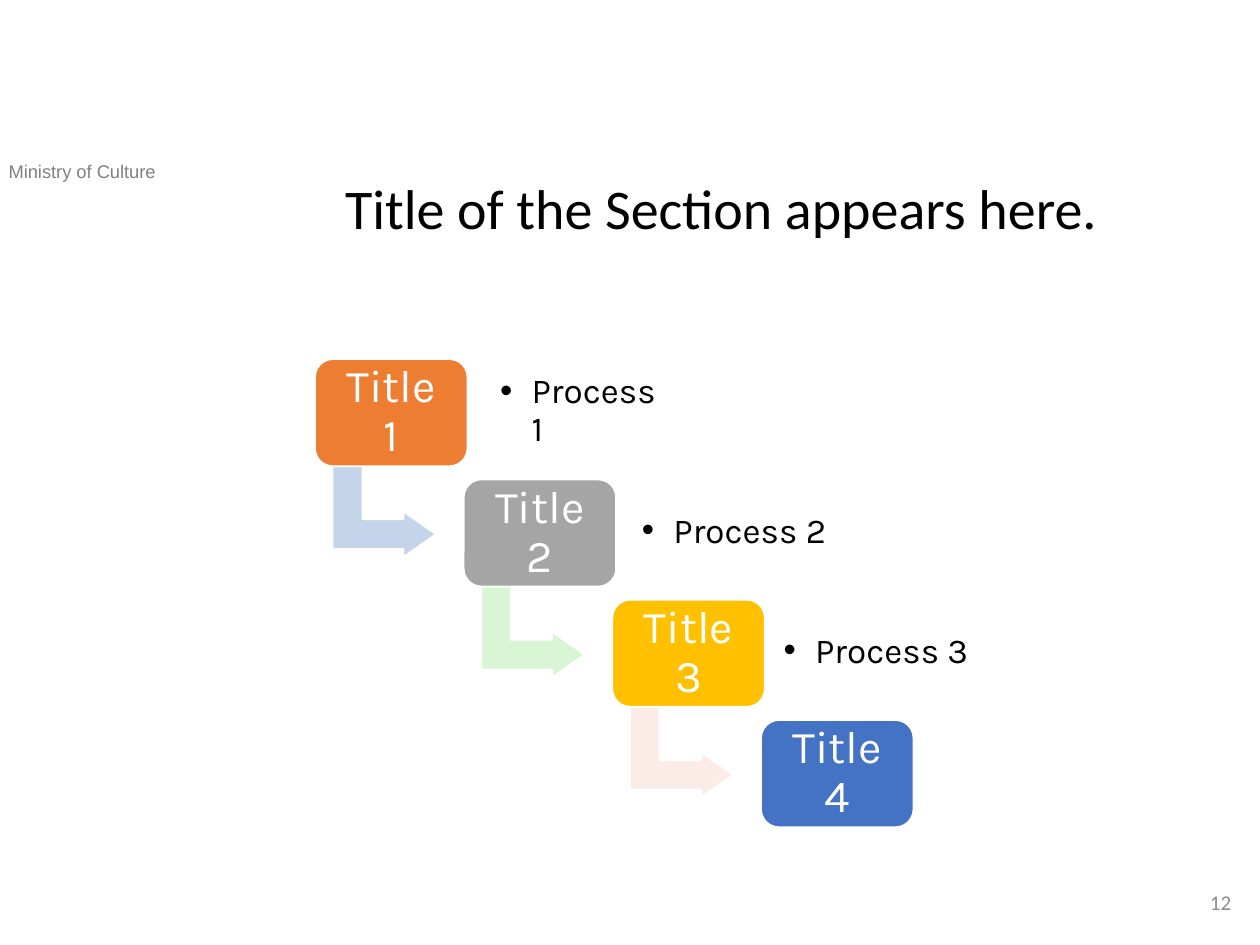
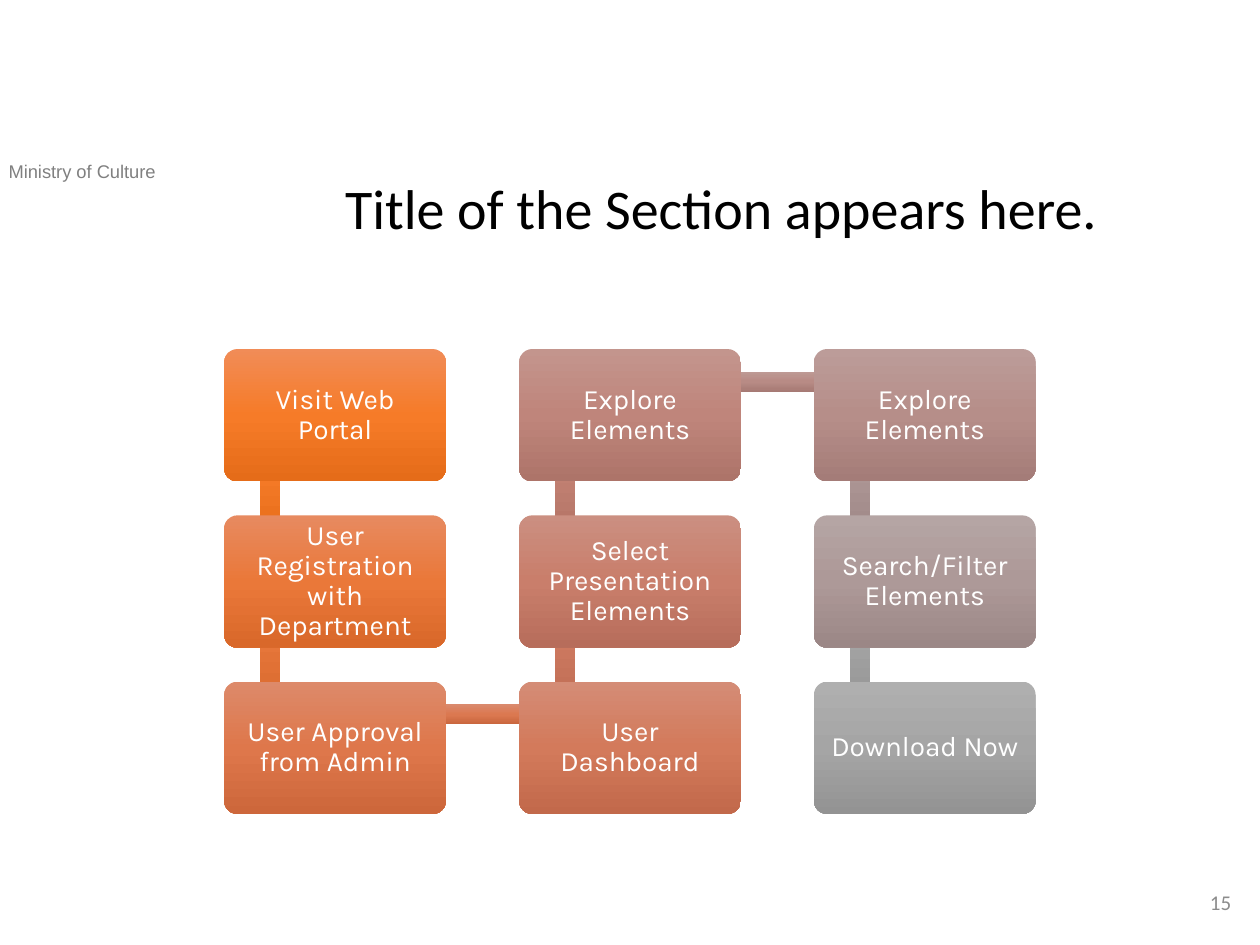
import copy
import pptx
import pptx.dml.color
import pptx.enum.dml
import pptx.enum.shapes
import pptx.enum.text
import pptx.oxml.ns
import pptx.util
from lxml import etree

RGB = pptx.dml.color.RGBColor.from_string
RGBColor = pptx.dml.color.RGBColor
SHAPE = pptx.enum.shapes.MSO_SHAPE
ALIGN = pptx.enum.text.PP_ALIGN
ANCHOR = pptx.enum.text.MSO_ANCHOR
Inches = pptx.util.Inches
Pt = pptx.util.Pt
qn = pptx.oxml.ns.qn

WHITE = RGBColor(0xFF, 0xFF, 0xFF)
BLACK = RGBColor(0x00, 0x00, 0x00)
HEADER_GREY = RGBColor(0x80, 0x80, 0x80)
NUMBER_GREY = RGBColor(0x8C, 0x8C, 0x8C)
ORANGE = RGBColor(0xED, 0x7D, 0x31)
GREY = RGBColor(0xA5, 0xA5, 0xA5)
GOLD = RGBColor(0xFF, 0xC0, 0x00)
BLUE = RGBColor(0x44, 0x72, 0xC4)
PALE_BLUE = RGBColor(0xC4, 0xD5, 0xEB)
PALE_GREEN = RGBColor(0xD8, 0xF5, 0xD4)
PALE_PINK = RGBColor(0xFC, 0xEC, 0xE8)

HEADER = "Ministry of Culture"
TITLE = "Title of the Section appears here."

STAIRS = [
    ("Title 1", ORANGE, "Process 1", 1.6, PALE_BLUE),
    ("Title 2", GREY, "Process 2", 2.35, PALE_GREEN),
    ("Title 3", GOLD, "Process 3", 1.97, PALE_PINK),
    ("Title 4", BLUE, None, None, None),
]

FLOW = [
    ("Visit Web Portal", "F18C57 F67B28 E56C19", "F18C57 F67B28 E56C19"),
    ("User Registration with Department", "E78A60 EA7839 D9682A", "E58A61 E8783C D7682C"),
    ("User Approval from Admin", "DD8A6A DE774B CD673B", "DA8A6E DB7850 CA673F"),
    ("User Dashboard", "D48C76 D37A5B C2694B", "D08D7B CF7B62 BD6B52"),
    ("Select Presentation Elements", "CB8F81 C97E6B B76D5B", "C79288 C38274 B17163"),
    ("Explore Elements", "C3958D BF857B AD7469", "BE9A95 B88B85 A67A74"),
    ("Explore Elements", "BC9C99 B68E89 A47C78", "B6A4A2 AE9796 9C8584"),
    ("Search/Filter Elements", "B5A5A4 AD9998 9B8786", "AFAFAF A5A5A5 939393"),
    ("Download Now", "AFAFAF A5A5A5 939393", None),
]

STYLES = {
    "header": {"font": {"name": "Arial", "size": Pt(10.5)}, "color": HEADER_GREY},
    "number": {"font": {"name": "Calibri", "size": Pt(12)}, "color": NUMBER_GREY,
               "para": {"alignment": ALIGN.RIGHT}, "anchor": ANCHOR.MIDDLE},
    "title": {"font": {"name": "Calibri", "size": Pt(32)}, "color": BLACK,
              "para": {"line_spacing": 0.9}},
    "stair": {"font": {"name": "Karla", "size": Pt(26)}, "color": WHITE, "inset": 0.11,
              "para": {"alignment": ALIGN.CENTER, "line_spacing": 0.9}, "anchor": ANCHOR.MIDDLE},
    "process": {"font": {"name": "Karla", "size": Pt(20)}, "color": BLACK, "inset": 0.11,
                "para": {"level": 1, "line_spacing": 0.9}, "anchor": ANCHOR.MIDDLE,
                "bullet": "•"},
    "flow": {"font": {"name": "Karla", "size": Pt(16)}, "color": WHITE, "inset": 0.07,
             "para": {"alignment": ALIGN.CENTER, "line_spacing": 0.9}, "anchor": ANCHOR.MIDDLE},
}


def write(sp, text, style):
    fmt = STYLES[style]
    tf = sp.text_frame
    tf.word_wrap = True
    tf.vertical_anchor = fmt.get("anchor", ANCHOR.TOP)
    if "inset" in fmt:
        for side in ("left", "top", "right", "bottom"):
            setattr(tf, f"margin_{side}", Inches(fmt["inset"]))
    p = tf.paragraphs[0]
    for name, value in fmt.get("para", {}).items():
        setattr(p, name, value)
    if "bullet" in fmt:
        pPr = p._p.get_or_add_pPr()
        pPr.set("marL", str(Inches(0.25)))
        pPr.set("indent", str(-Inches(0.25)))
        etree.SubElement(pPr, qn("a:buFont")).set("typeface", "Arial")
        etree.SubElement(pPr, qn("a:buChar")).set("char", fmt["bullet"])
    r = p.add_run()
    r.text = text
    for name, value in fmt["font"].items():
        setattr(r.font, name, value)
    r.font.color.rgb = fmt["color"]


def add_text(s, box, text, style):
    write(s.shapes.add_textbox(*map(Inches, box)), text, style)


def add_shape(s, kind, box, adjustments=()):
    sp = s.shapes.add_shape(kind, *map(Inches, box))
    sp.shadow.inherit = False
    for i, value in enumerate(adjustments):
        sp.adjustments[i] = value
    return sp


def paint_solid(sp, color):
    sp.fill.solid()
    sp.fill.fore_color.rgb = color
    sp.line.color.rgb = WHITE
    sp.line.width = Pt(1)


def paint_gradient(sp, colors):
    sp.line.fill.background()
    sp.fill.gradient()
    sp.fill.gradient_angle = 270
    stops = sp._element.spPr.find(qn("a:gradFill")).find(qn("a:gsLst"))
    stops.insert(1, copy.deepcopy(stops[0]))
    for stop, position, color in zip(sp.fill.gradient_stops, (0, 0.5, 1), colors.split()):
        stop.position = position
        stop.color.rgb = RGB(color)


def add_slide(prs, number):
    s = prs.slides.add_slide(prs.slide_layouts[6])
    add_text(s, (-0.03, 1.22, 2.18, 0.28), HEADER, "header")
    add_text(s, (2.64, 1.39, 6.46, 0.79), TITLE, "title")
    add_text(s, (7.62, 6.96, 2.25, 0.4), str(number), "number")
    return s


def draw_stairs(s):
    for i, (title, color, process, width, arrow) in enumerate(STAIRS):
        x, y = 2.5 + 1.18 * i, 2.85 + 0.955 * i
        if arrow:
            sp = add_shape(s, SHAPE.BENT_UP_ARROW, (x + 0.19, y + 0.8, 0.72, 0.82),
                           (0.328, 0.25, 0.358))
            sp.rotation = 90
            paint_solid(sp, arrow)
        sp = add_shape(s, SHAPE.ROUNDED_RECTANGLE, (x, y, 1.21, 0.85), (0.167,))
        paint_solid(sp, color)
        write(sp, title, "stair")
        if process:
            add_text(s, (3.86 + 1.125 * i, y + 0.07, width, 0.69), process, "process")


def flow_corner(i, rows=3):
    col, row = divmod(i, rows)
    if col % 2:
        row = rows - 1 - row
    return 1.78 + 2.34 * col, 2.77 + 1.32 * row


def draw_flow(s):
    half = 0.08
    for i, (text, box_colors, link_colors) in enumerate(FLOW):
        x, y = flow_corner(i)
        if link_colors:
            x2, y2 = flow_corner(i + 1)
            left, top = min(x, x2) + 0.365, min(y, y2) + 0.26
            dx, dy = abs(x2 - x), abs(y2 - y)
            if dx > dy:
                link = (left, top - half, dx, 2 * half)
            else:
                link = (left - half, top, 2 * half, dy)
            paint_gradient(add_shape(s, SHAPE.RECTANGLE, link), link_colors)
        sp = add_shape(s, SHAPE.ROUNDED_RECTANGLE, (x, y, 1.76, 1.05), (0.1,))
        paint_gradient(sp, box_colors)
        write(sp, text, "flow")


def main():
    prs = pptx.Presentation()
    prs.slide_width, prs.slide_height = Inches(10), Inches(7.5)
    draw_stairs(add_slide(prs, 12))
    draw_flow(add_slide(prs, 15))
    prs.save("out.pptx")


if __name__ == "__main__":
    main()
